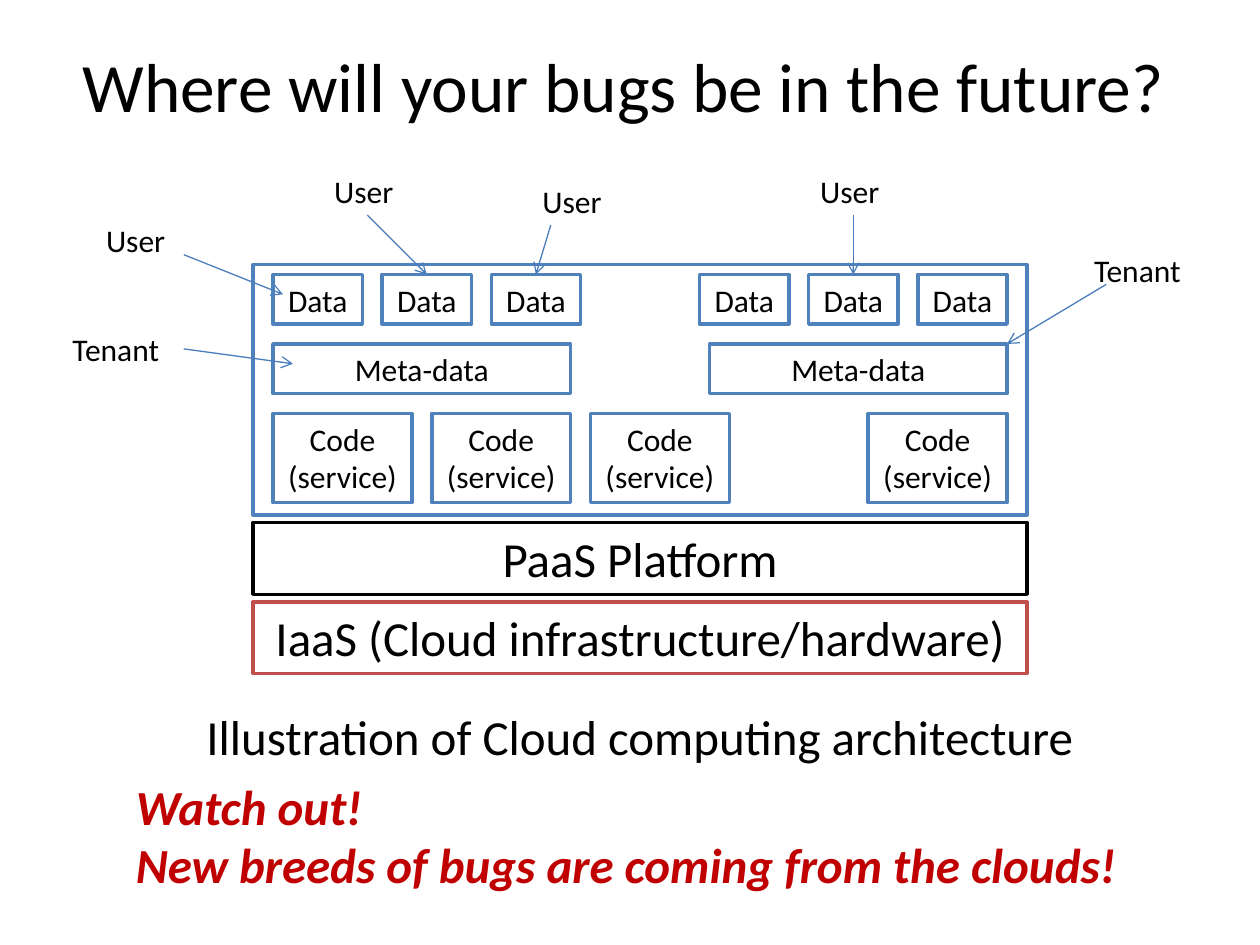
from typing import NamedTuple, Optional

from lxml.etree import SubElement
from pptx import Presentation
from pptx.dml.color import RGBColor as Rgb
from pptx.enum.shapes import MSO_CONNECTOR as Link, MSO_SHAPE as Kind
from pptx.enum.text import MSO_ANCHOR as Anchor, MSO_AUTO_SIZE as Fit, PP_ALIGN as Align
from pptx.oxml.ns import qn
from pptx.util import Inches, Pt

INK = {"text": "000000", "back": "FFFFFF", "blue": "4F81BD", "red": "C0504D",
       "arrow": "4B7EBC", "alert": "C00000"}
FONT = "Calibri"

# The grid starts at the top left corner of the cloud frame.
LEFT, TOP, UNIT = 2.01, 2.1, 6.14 / 78
TALL = 5  # rows taken by one line of 18 pt text


class Box(NamedTuple):
    text: str
    col: float
    row: float
    cols: float
    rows: float
    line: str = "blue"
    size: float = 18


class Label(NamedTuple):
    text: str
    col: float
    row: float


class Arrow(NamedTuple):
    """Ends are grid points; a glue is (shape key, side)."""
    start: tuple[float, float]
    end: tuple[float, float]
    head: Optional[tuple] = None
    tail: Optional[tuple] = None


LAYERS = [
    Box("PaaS Platform", 0, 26, 78, 7.25, "text", 28),
    Box("IaaS (Cloud infrastructure/hardware)", 0, 34, 78, 7.25, "red", 28),
    Box("", 0, 0, 78, 25.25),
]
PARTS = [
    *(Box("Code (service) ", col, 15, 14, 9) for col in (2, 18, 34, 62)),
    *(Box("Meta-data", col, 8, 30, TALL) for col in (2, 46)),
    *(Box("Data", side + 11 * i, 1, 9, TALL) for side in (2, 45) for i in range(3)),
]
LABELS = [
    Label("Tenant ", -20, 6), Label("User ", -18, -5), Label("User ", 5, -10),
    Label("User ", 26, -9), Label("Tenant ", 83, -2), Label("User ", 54, -10),
]
ARROWS = [
    Arrow((-7, 8.5), (4, 10), ((-20, 6), 3)),
    Arrow((-7, -1), (3, 3)),
    Arrow((11.5, -5), (17.5, 1), ((5, -10), 2), ((13, 1), 0)),
    Arrow((30, -4), (28.5, 1), None, ((24, 1), 0)),
    Arrow((86, 2), (76, 8)),
    Arrow((60.5, -5), (60.5, 1), ((54, -10), 2), ((56, 1), 0)),
]


def spot(col: float, row: float) -> tuple:
    return Inches(LEFT + col * UNIT), Inches(TOP + row * UNIT)


def span(cols: float, rows: float) -> tuple:
    return Inches(cols * UNIT), Inches(rows * UNIT)


def write(frame, lines: list[str], size: float, tint: str = "text",
          align=Align.CENTER, bold: bool = False) -> None:
    """Fill a text frame, one paragraph a line; bold text is italic too."""
    for i, line in enumerate(lines):
        para = frame.add_paragraph() if i else frame.paragraphs[0]
        para.alignment = align
        run = para.add_run()
        run.text = line
        font = run.font
        font.name, font.size = FONT, Pt(size)
        font.color.rgb = Rgb.from_string(INK[tint])
        if bold:
            font.bold = font.italic = True


def draw_box(slide, box: Box):
    shape = slide.shapes.add_shape(
        Kind.RECTANGLE, *spot(box.col, box.row), *span(box.cols, box.rows))
    shape.shadow.inherit = False
    shape.fill.solid()
    shape.fill.fore_color.rgb = Rgb.from_string(INK["back"])
    shape.line.color.rgb = Rgb.from_string(INK[box.line])
    shape.line.width = Pt(2)
    if box.text:
        frame = shape.text_frame
        frame.word_wrap, frame.vertical_anchor = True, Anchor.TOP
        write(frame, [box.text], box.size)
    return shape


def draw_label(slide, label: Label):
    shape = slide.shapes.add_textbox(*spot(label.col, label.row), *span(13, TALL))
    shape.text_frame.word_wrap = True
    write(shape.text_frame, [label.text], 18)
    return shape


def draw_arrow(slide, arrow: Arrow, nodes: dict) -> None:
    link = slide.shapes.add_connector(
        Link.STRAIGHT, *spot(*arrow.start), *spot(*arrow.end))
    if arrow.head:
        link.begin_connect(nodes[arrow.head[0]], arrow.head[1])
    if arrow.tail:
        link.end_connect(nodes[arrow.tail[0]], arrow.tail[1])
    link.line.color.rgb = Rgb.from_string(INK["arrow"])
    link.line.width = Pt(0.75)
    SubElement(link.line._get_or_add_ln(), qn("a:tailEnd"), type="arrow")
    SubElement(link._element.spPr, qn("a:effectLst"))


def draw_title(slide) -> None:
    title = slide.shapes.title
    title.left, title.top = Inches(0.51), Inches(0.21)
    title.width, title.height = Inches(9), Inches(0.93)
    frame = title.text_frame
    frame.word_wrap, frame.auto_size = True, Fit.NONE
    frame.vertical_anchor = Anchor.MIDDLE
    write(frame, ["Where will your bugs be in the future? "], 39.6)


def draw_notes(slide) -> None:
    """Add the caption and the warning below the diagram."""
    caption = slide.shapes.add_textbox(
        Inches(1.54), Inches(5.56), Inches(7.16), Inches(0.57)).text_frame
    caption.word_wrap = False
    write(caption, ["Illustration of Cloud computing architecture"], 28, align=Align.LEFT)
    alert = slide.shapes.add_textbox(
        Inches(0.98), Inches(6.11), Inches(8.35), Inches(1.04)).text_frame
    alert.word_wrap = True
    write(alert, ["Watch out!", "New breeds of bugs are coming from the clouds!"],
          28, "alert", Align.LEFT, True)


def main() -> None:
    deck = Presentation()
    deck.slide_width, deck.slide_height = Inches(10), Inches(7.5)
    slide = deck.slides.add_slide(deck.slide_layouts[5])
    draw_title(slide)
    for layer in LAYERS:
        draw_box(slide, layer)
    nodes = {(part.col, part.row): draw_box(slide, part) for part in PARTS}
    for label in LABELS:
        nodes[label.col, label.row] = draw_label(slide, label)
    for arrow in ARROWS:
        draw_arrow(slide, arrow, nodes)
    draw_notes(slide)
    deck.save("out.pptx")


if __name__ == "__main__":
    main()
